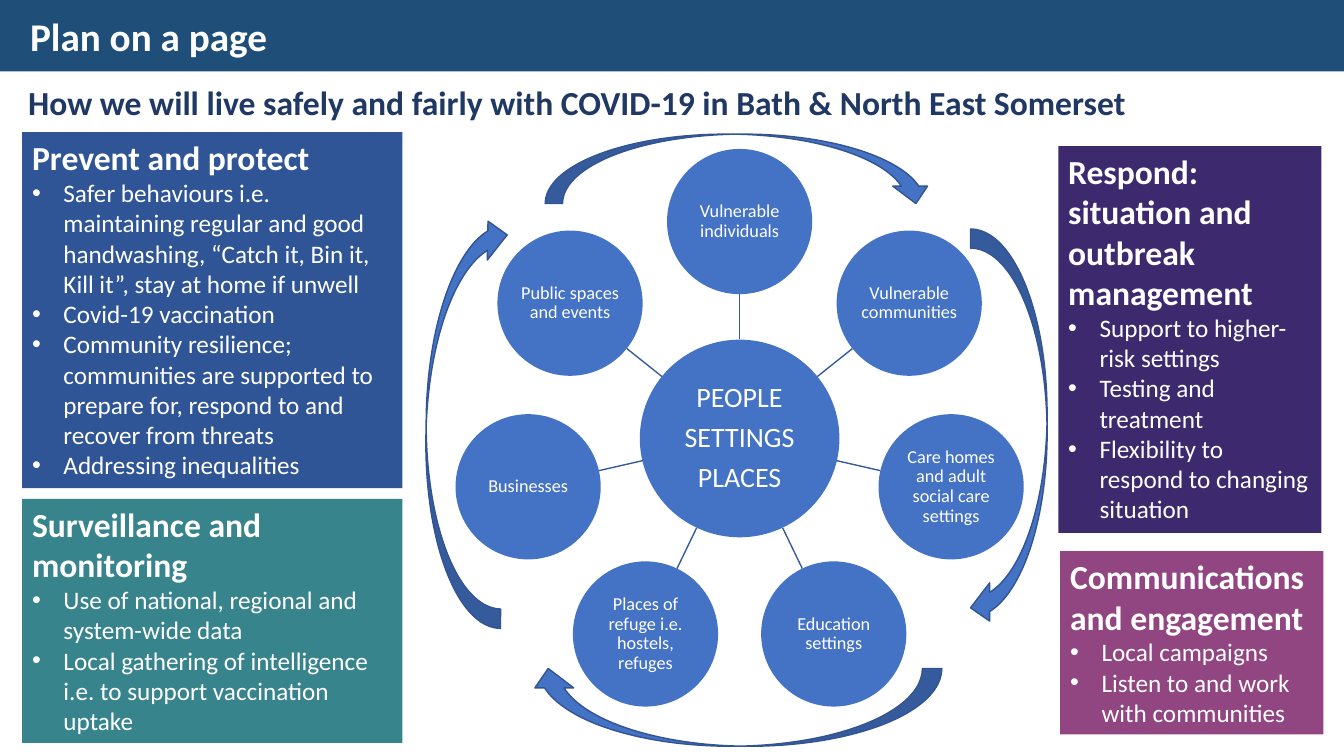
from math import cos, pi, sin

from lxml import etree
from pptx import Presentation
from pptx import util as u
from pptx.dml.color import RGBColor
from pptx.enum import shapes, text
from pptx.oxml import ns

Cm, Pt = u.Cm, u.Pt
FONT = "Calibri"
COLORS = {
    "white": "FFFFFF", "banner": "1F4E79", "subtitle": "203864",
    "circle": "4472C4", "spoke": "365B9D", "edge": "325491",
    "prevent": "2F5597", "respond": "3D2A6E",
    "monitor": "38848C", "engage": "914581",
}
PANELS = [
    ((0.56, 3.33, 9.58, 8.97), "prevent", "Prevent and protect", [
        "Safer behaviours i.e. maintaining regular and good handwashing, "
        "“Catch it, Bin it, Kill it”, stay at home if unwell",
        "Covid-19 vaccination",
        "Community resilience; communities are supported to prepare for, "
        "respond to and recover from threats",
        "Addressing inequalities"]),
    ((26.67, 3.68, 6.63, 9.75), "respond",
     "Respond: situation and outbreak management", [
         "Support to higher-risk settings",
         "Testing and treatment",
         "Flexibility to respond to changing situation"]),
    ((0.56, 12.57, 9.58, 6.15), "monitor", "Surveillance and monitoring", [
        "Use of national, regional and system-wide data",
        "Local gathering of intelligence i.e. to support vaccination uptake"]),
    ((26.72, 13.89, 6.63, 4.62), "engage", "Communications and engagement", [
        "Local campaigns",
        "Listen to and work with communities"]),
]
HUB = ["PEOPLE", "SETTINGS", "PLACES"]
GROUPS = [
    "Vulnerable individuals", "Vulnerable communities",
    "Care homes and adult social care settings", "Education settings",
    "Places of refuge i.e. hostels, refuges", "Businesses",
    "Public spaces and events",
]
KIND = shapes.MSO_SHAPE
ARROWS = [  # box, kind, rotation, mirrored
    ((24.46, 5.77, 1.93, 10.03), KIND.CURVED_RIGHT_ARROW, 0, True),
    ((13.74, 3.38, 9.78, 1.75), KIND.CURVED_DOWN_ARROW, 0, False),
    ((17.55, 12.62, 1.96, 10.41), KIND.CURVED_LEFT_ARROW, 90, False),
    ((10.74, 5.41, 1.96, 10.41), KIND.CURVED_LEFT_ARROW, 181, False),
]


def color(name):
    return RGBColor.from_string(COLORS[name])


def style(para, size, name="white", bold=False):
    font = para.font
    font.name, font.size, font.bold = FONT, Pt(size), bold
    font.color.rgb = color(name)


def add_form(slide, kind, box, fill):
    form = slide.shapes.add_shape(kind, *map(Cm, box))
    form.shadow.inherit = False
    form.fill.solid()
    form.fill.fore_color.rgb = color(fill)
    form.line.fill.background()
    return form


def add_paras(frame, lines):
    """Write each line as a left-aligned paragraph and yield it."""
    frame.word_wrap = True
    for i, line in enumerate(lines):
        para = frame.add_paragraph() if i else frame.paragraphs[0]
        para.text = line
        para.alignment = text.PP_ALIGN.LEFT
        yield para


def add_bullet(para):
    props = para._p.get_or_add_pPr()
    props.set("marL", str(Cm(0.79)))
    props.set("indent", str(-Cm(0.79)))
    etree.SubElement(props, ns.qn("a:buFont")).set("typeface", "Arial")
    etree.SubElement(props, ns.qn("a:buChar")).set("char", "•")


def add_banner(slide, box, title):
    frame = add_form(slide, KIND.RECTANGLE, box, "banner").text_frame
    frame.vertical_anchor = text.MSO_ANCHOR.MIDDLE
    frame.margin_left = Cm(0.76)
    for para in add_paras(frame, [title]):
        style(para, 28, bold=True)


def add_subtitle(slide, box, line):
    frame = slide.shapes.add_textbox(*map(Cm, box)).text_frame
    for para in add_paras(frame, [line]):
        style(para, 24, "subtitle", True)


def add_panel(slide, box, fill, head, points):
    frame = add_form(slide, KIND.RECTANGLE, box, fill).text_frame
    frame.vertical_anchor = text.MSO_ANCHOR.TOP
    for i, para in enumerate(add_paras(frame, [head, *points])):
        if i:
            add_bullet(para)
        style(para, 18 if i else 24, bold=not i)


def add_circle(slide, x, y, wide, high, lines, size):
    """Draw a labelled circle centred on x, y."""
    box = (x - wide / 2, y - high / 2, wide, high)
    frame = add_form(slide, KIND.OVAL, box, "circle").text_frame
    frame.vertical_anchor = text.MSO_ANCHOR.MIDDLE
    frame.margin_left = frame.margin_right = Cm(0.03)
    frame.margin_top = frame.margin_bottom = Cm(0.03)
    for para in add_paras(frame, lines):
        para.alignment = text.PP_ALIGN.CENTER
        para.line_spacing = 0.9
        para.space_after = Pt(0.35 * size)
        style(para, size)


def add_spoke(slide, start, end):
    spoke = slide.shapes.add_connector(
        shapes.MSO_CONNECTOR.STRAIGHT, *map(Cm, start + end))
    spoke.line.color.rgb = color("spoke")
    spoke.line.width = Pt(1)
    etree.SubElement(spoke._element.spPr, ns.qn("a:effectLst"))


def add_wheel(slide, box):
    """Set the groups evenly around the hub, clockwise from the top."""
    left, top, wide, high = box
    x, y = left + wide / 2, top + high / 2
    size = 3.66
    orbit = (wide - size) / 2 / cos(pi / 14)
    add_circle(slide, x, y, 5.03, 4.98, HUB, 20)
    for i, group in enumerate(GROUPS):
        turn = 2 * pi * i / len(GROUPS)

        def point(reach):
            return x + reach * sin(turn), y - reach * cos(turn)

        add_spoke(slide, point(2.5), point(orbit - size / 2))
        add_circle(slide, *point(orbit), size, size, [group], 13)


def add_arrow(slide, box, kind, turn, mirror):
    arrow = add_form(slide, kind, box, "circle")
    arrow.line.color.rgb = color("edge")
    arrow.line.width = Pt(1)
    arrow.rotation = turn
    if mirror:
        arrow._element.spPr.get_or_add_xfrm().set("flipH", "1")


def main():
    deck = Presentation()
    deck.slide_width, deck.slide_height = Cm(33.87), Cm(19.05)
    slide = deck.slides.add_slide(deck.slide_layouts[6])
    add_banner(slide, (0, 0, 33.87, 1.8), "Plan on a page")
    add_subtitle(slide, (0.46, 1.93, 29.54, 1.27),
                 "How we will live safely and fairly with COVID-19 "
                 "in Bath & North East Somerset")
    add_wheel(slide, (11.48, 3.75, 14.32, 14.6))
    for panel in PANELS:
        add_panel(slide, *panel)
    for arrow in ARROWS:
        add_arrow(slide, *arrow)
    deck.save("out.pptx")


if __name__ == "__main__":
    main()
